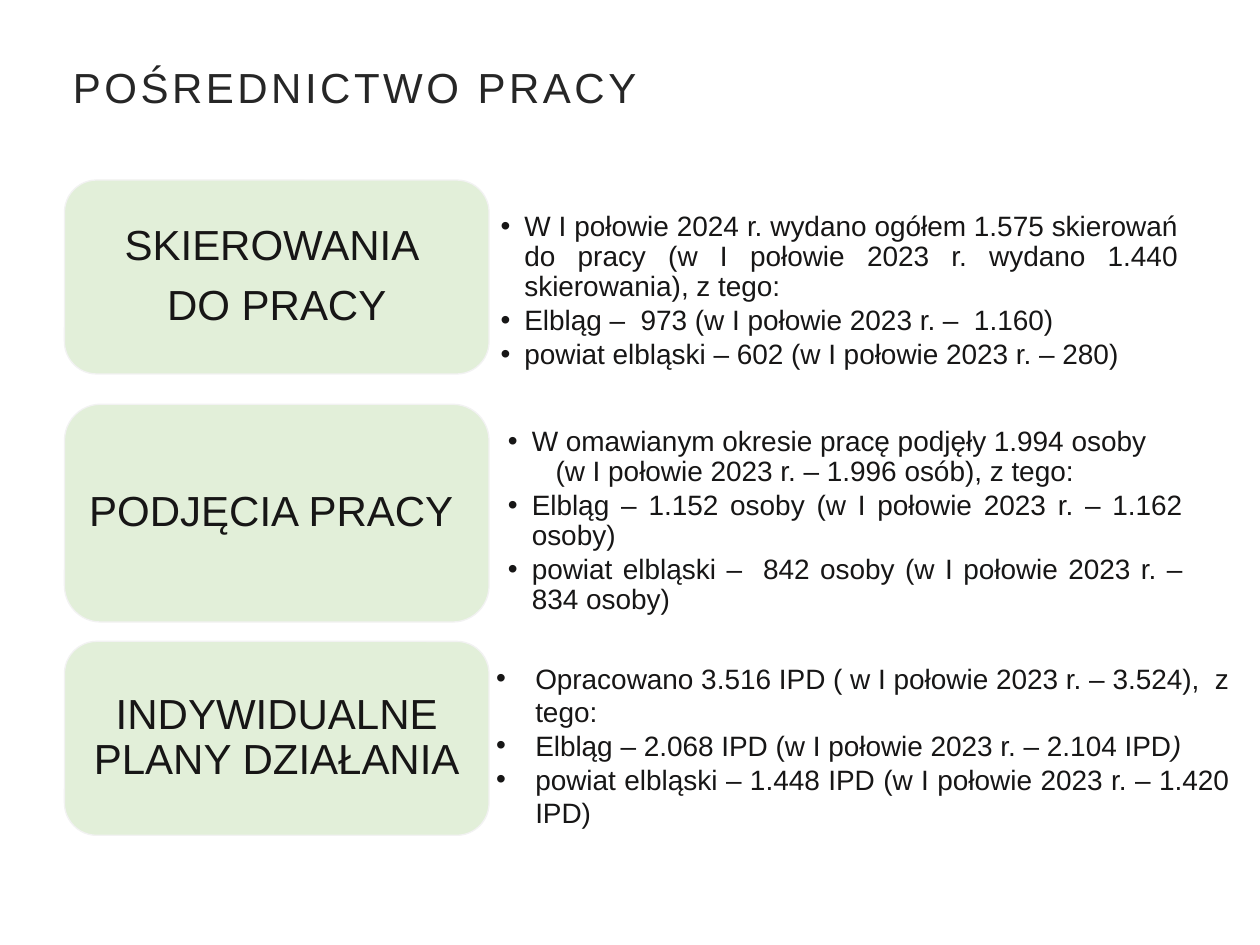
"""Build the slide on job placement: three labels, each with a bulleted list."""

from dataclasses import dataclass

import lxml.etree
import pptx
import pptx.dml.color
import pptx.enum.shapes
import pptx.enum.text
import pptx.oxml.ns
import pptx.util

Cm = pptx.util.Cm
Pt = pptx.util.Pt
Align = pptx.enum.text.PP_ALIGN


@dataclass(frozen=True)
class Theme:
    """Colours, font and type sizes of the slide."""

    font: str = "Arial"
    title: str = "262626"
    text: str = "171616"
    label_fill: str = "E2EFD9"
    label_line: str = "F2F2F2"
    heading_size: int = 24
    list_size: int = 16


@dataclass(frozen=True)
class Area:
    """A rectangle in centimetres."""

    left: float
    top: float
    width: float
    height: float


@dataclass(frozen=True)
class Item:
    """A list entry, with an optional italic ending."""

    text: str
    italic_end: str = ""
    bullet: bool = True
    after: float = 2


@dataclass(frozen=True)
class Section:
    """A label and the list beside it."""

    label: tuple[str, ...]
    label_top: float
    label_height: float
    placeholder: int
    area: Area
    items: tuple[Item, ...]
    insets: tuple[float, float] = (0.69, 0.36)
    indent: float = 0.48
    line_spacing: float = 0.9


THEME = Theme()
LABEL_LEFT, LABEL_WIDTH = 1.3, 8.56
SECTIONS = (
    Section(
        ("SKIEROWANIA ", "DO PRACY"), 3.63, 3.91, 2, Area(9.4, 4.01, 15.04, 3.73),
        (
            Item("W I połowie 2024 r. wydano ogółem 1.575 skierowań do pracy "
                 "(w I połowie 2023 r. wydano 1.440 skierowania), z tego:"),
            Item("Elbląg –  973 (w I połowie 2023 r. –  1.160)"),
            Item("powiat elbląski – 602 (w I połowie 2023 r. – 280)"),
        ),
    ),
    Section(
        ("PODJĘCIA PRACY ",), 8.15, 4.39, 4, Area(9.55, 8.2, 14.99, 4.62),
        (
            Item("W omawianym okresie pracę podjęły 1.994 osoby", after=0),
            Item("(w I połowie 2023 r. – 1.996 osób), z tego:", bullet=False),
            Item("Elbląg – 1.152 osoby (w I połowie 2023 r. – 1.162 osoby)"),
            Item("powiat elbląski –  842 osoby (w I połowie 2023 r. – 834 osoby)"),
        ),
    ),
    Section(
        ("INDYWIDUALNE PLANY DZIAŁANIA",), 12.93, 3.91, 3, Area(9.75, 12.93, 15.29, 4.19),
        (
            Item("Opracowano 3.516 IPD ( w I połowie 2023 r. – 3.524),  z tego:", after=0),
            Item("Elbląg – 2.068 IPD (w I połowie 2023 r. – 2.104 IPD", ")", after=0),
            Item("powiat elbląski – 1.448 IPD (w I połowie 2023 r. – 1.420 IPD)", after=0),
        ),
        insets=(0.25, 0.13), indent=0.79, line_spacing=1.0,
    ),
)


def rgb(value: str) -> pptx.dml.color.RGBColor:
    """Turn a hex string into a colour."""
    return pptx.dml.color.RGBColor.from_string(value)


def write(frame, text: str, *, size: int, color: str = THEME.text, align=Align.LEFT,
          line_spacing: float = 0.9, after: float = 0, left: float = 0,
          first: float = 0, bullet: bool = False, italic_end: str = "",
          tracking: int = 0) -> None:
    """Add one formatted paragraph to a text frame."""
    para = frame.paragraphs[0]
    if para.runs:
        para = frame.add_paragraph()
    para.alignment = align
    para.line_spacing = line_spacing
    para.space_before, para.space_after = Pt(0), Pt(after)
    properties = para._p.get_or_add_pPr()
    properties.set("marL", str(Cm(left)))
    properties.set("indent", str(Cm(first)))
    tag = "a:buChar" if bullet else "a:buNone"
    mark = lxml.etree.SubElement(properties, pptx.oxml.ns.qn(tag))
    if bullet:
        mark.set("char", "•")
    for words, italic in ((text, False), (italic_end, True)):
        if words:
            span = para.add_run()
            span.text = words
            span.font.name, span.font.size = THEME.font, Pt(size)
            span.font.bold, span.font.italic = False, italic
            span.font.color.rgb = rgb(color)
            if tracking:
                span._r.get_or_add_rPr().set("spc", str(tracking * 100))


def place(box, area: Area, insets: tuple[float, float]):
    """Move a placeholder, prepare its text frame and return the frame."""
    box.left, box.top = Cm(area.left), Cm(area.top)
    box.width, box.height = Cm(area.width), Cm(area.height)
    frame = box.text_frame
    frame.word_wrap = True
    frame.auto_size = pptx.enum.text.MSO_AUTO_SIZE.NONE
    frame.vertical_anchor = pptx.enum.text.MSO_ANCHOR.MIDDLE
    frame.margin_left = frame.margin_right = Cm(insets[0])
    frame.margin_top = frame.margin_bottom = Cm(insets[1])
    return frame


def draw_label(page, section: Section) -> None:
    """Draw the rounded label of a section."""
    box = page.shapes.add_shape(
        pptx.enum.shapes.MSO_SHAPE.ROUNDED_RECTANGLE,
        Cm(LABEL_LEFT), Cm(section.label_top), Cm(LABEL_WIDTH), Cm(section.label_height))
    box.shadow.inherit = False
    box.fill.solid()
    box.fill.fore_color.rgb = rgb(THEME.label_fill)
    box.line.color.rgb = rgb(THEME.label_line)
    box.line.width = Pt(0.75)
    box.text_frame.word_wrap = True
    box.text_frame.vertical_anchor = pptx.enum.text.MSO_ANCHOR.MIDDLE
    for line in section.label:
        write(box.text_frame, line, size=THEME.heading_size, align=Align.CENTER, after=8)


def fill_list(page, section: Section) -> None:
    """Fill the list placeholder of a section."""
    box = page.placeholders[section.placeholder]
    frame = place(box, section.area, section.insets)
    for item in section.items:
        write(frame, item.text, size=THEME.list_size, align=Align.JUSTIFY,
              line_spacing=section.line_spacing, after=item.after,
              left=section.indent if item.bullet else 2 * section.indent,
              first=-section.indent if item.bullet else 0,
              bullet=item.bullet, italic_end=item.italic_end)


def main() -> None:
    """Build and save the deck."""
    deck = pptx.Presentation()
    deck.slide_width, deck.slide_height = Cm(25.4), Cm(19.05)
    page = deck.slides.add_slide(deck.slide_layouts.get_by_name("Comparison"))
    title = place(page.shapes.title, Area(0.71, 0.53, 24.21, 2.57), (0.51, 0.51))
    write(title, "POŚREDNICTWO PRACY", size=THEME.heading_size, color=THEME.title,
          left=0.25, tracking=2)
    for section in SECTIONS:
        fill_list(page, section)
        draw_label(page, section)
    for box in list(page.placeholders):
        if not box.text_frame.text:
            box._element.getparent().remove(box._element)
    deck.save("out.pptx")


if __name__ == "__main__":
    main()
